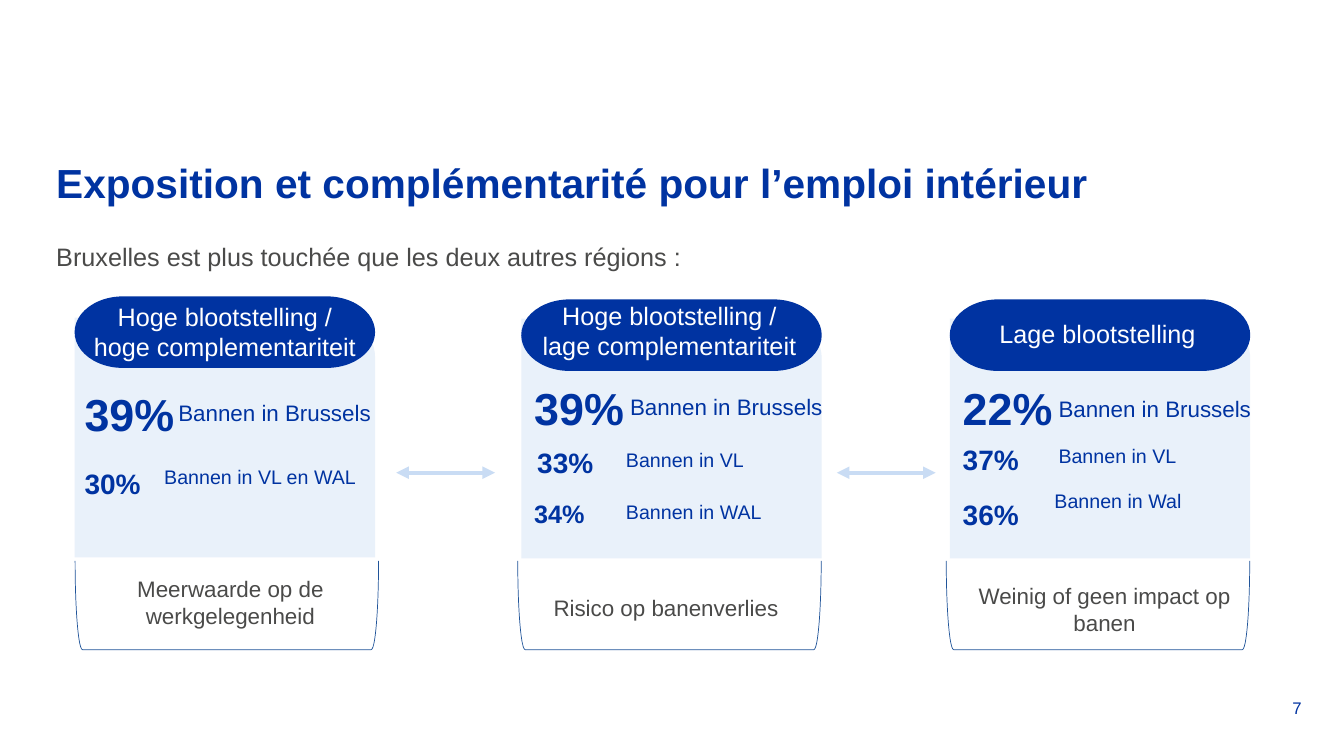
from lxml.etree import SubElement
from pptx import Presentation
from pptx.dml.color import RGBColor
from pptx.enum.shapes import MSO_CONNECTOR, MSO_SHAPE
from pptx.enum.text import MSO_ANCHOR, MSO_AUTO_SIZE, PP_ALIGN
from pptx.oxml.ns import qn
from pptx.util import Pt

PX = 9144
NAVY = RGBColor(0x00, 0x33, 0xA1)
PALE = RGBColor(0xC9, 0xDC, 0xF4)
GREY = RGBColor(0x4A, 0x4A, 0x49)
EDGE = RGBColor(0x20, 0x54, 0x99)
WHITE = RGBColor(0xFF, 0xFF, 0xFF)

CARDS = [
    {
        "left": 74, "panel_top": 315, "cap_top": 294, "bracket_left": 181,
        "heading": ("Hoge blootstelling /\vhoge complementariteit", 74, 294, 298, 71),
        "figures": [("39%", 74, 379, 32), ("30%", 74, 458, 20)],
        "labels": [("Bannen in Brussels", 167, 391, 16),
                   ("Bannen in VL en WAL", 153, 456, 14)],
        "outcome": ("Meerwaarde op de werkgelegenheid", 85, 566, 287, 64),
    },
    {
        "left": 517, "panel_top": 316, "cap_top": 297, "bracket_left": 620,
        "heading": ("Hoge blootstelling /\vlage complementariteit", 521, 293, 286, 71),
        "figures": [("39%", 520, 373, 32), ("33%", 523, 437, 20), ("34%", 520, 489, 18)],
        "labels": [("Bannen in Brussels", 615, 385, 16),
                   ("Bannen in VL", 611, 439, 14),
                   ("Bannen in WAL", 611, 491, 14)],
        "outcome": ("Risico op banenverlies", 517, 585, 287, 37),
    },
    {
        "left": 942, "panel_top": 316, "cap_top": 297, "bracket_left": 1045,
        "heading": ("Lage blootstelling", 945, 311, 287, 40),
        "figures": [("22%", 945, 373, 32), ("37%", 945, 434, 20), ("36%", 945, 489, 20)],
        "labels": [("Bannen in Brussels", 1040, 387, 16),
                   ("Bannen in VL", 1040, 435, 14),
                   ("Bannen in Wal", 1036, 480, 14)],
        "outcome": ("Weinig of geen impact op banen", 952, 573, 287, 64),
    },
]
ARROW_STARTS = [393, 830]


def scaled(*lengths):
    return [length * PX for length in lengths]


def apply_format(target, values):
    for name, value in values.items():
        setattr(target, name, value)


def add_text(page, text, left, top, width, height, size, color=NAVY, bold=False,
             align=PP_ALIGN.LEFT, anchor=MSO_ANCHOR.TOP, line_spacing=None):
    box = page.shapes.add_textbox(*scaled(left, top, width, height))
    apply_format(box.text_frame, {
        "word_wrap": True, "vertical_anchor": anchor, "text": text,
        "auto_size": (MSO_AUTO_SIZE.SHAPE_TO_FIT_TEXT if anchor == MSO_ANCHOR.TOP
                      else MSO_AUTO_SIZE.NONE),
    })
    para = box.text_frame.paragraphs[0]
    apply_format(para, {"alignment": align, "line_spacing": line_spacing})
    for span in para.runs:
        apply_format(span.font, {"name": "Arial", "size": Pt(size), "bold": bold})
        span.font.color.rgb = color


def add_filled(page, preset, left, top, width, height, color, opacity=100):
    shape = page.shapes.add_shape(preset, *scaled(left, top, width, height))
    shape.shadow.inherit = False
    shape.fill.solid()
    shape.fill.fore_color.rgb = color
    shape.line.fill.background()
    if opacity < 100:
        tint = shape._element.spPr.find(qn("a:solidFill")).find(qn("a:srgbClr"))
        SubElement(tint, qn("a:alpha"), val=str(opacity * 1000))


def add_bracket(page, left):
    bracket = page.shapes.add_shape(MSO_SHAPE.LEFT_BRACKET, *scaled(left, 450, 88, 301))
    bracket.shadow.inherit = False
    bracket.rotation = 270
    bracket.fill.background()
    bracket.line.color.rgb = EDGE
    bracket.line.width = Pt(0.5)


def add_double_arrow(page, start):
    arrow = page.shapes.add_connector(
        MSO_CONNECTOR.STRAIGHT, *scaled(start, 469, start + 98, 469))
    arrow.line.color.rgb = PALE
    arrow.line.width = Pt(3)
    outline = arrow._element.spPr.find(qn("a:ln"))
    for end in ("a:headEnd", "a:tailEnd"):
        SubElement(outline, qn(end), type="triangle")
    SubElement(arrow._element.spPr, qn("a:effectLst"))


def add_card(page, card):
    left = card["left"]
    add_filled(page, MSO_SHAPE.ROUND_1_RECTANGLE, left, card["panel_top"], 298, 238, PALE, 40)
    add_filled(page, MSO_SHAPE.FLOWCHART_TERMINATOR, left, card["cap_top"], 298, 71, NAVY)
    add_bracket(page, card["bracket_left"])
    add_text(page, *card["heading"], 18, WHITE, align=PP_ALIGN.CENTER)
    for text, x, y, size in card["figures"]:
        add_text(page, text, x, y, 242, size * 2, size, bold=True)
    for text, x, y, size in card["labels"]:
        add_text(page, text, x, y, 219, 37 if size == 16 else 34, size)
    add_text(page, *card["outcome"], 16, GREY, align=PP_ALIGN.CENTER)


def main():
    deck = Presentation()
    deck.slide_width, deck.slide_height = scaled(1333, 750)
    page = deck.slides.add_slide(deck.slide_layouts[6])
    add_text(page, "Exposition et complémentarité pour l’emploi intérieur",
             46, 111, 1117, 145, 29, bold=True, anchor=MSO_ANCHOR.MIDDLE, line_spacing=0.9)
    add_text(page, "Bruxelles est plus touchée que les deux autres régions :",
             46, 234, 793, 40, 18, GREY)
    for card in CARDS:
        add_card(page, card)
    for start in ARROW_STARTS:
        add_double_arrow(page, start)
    add_text(page, "7", 1001, 682, 300, 40, 12,
             align=PP_ALIGN.RIGHT, anchor=MSO_ANCHOR.MIDDLE)
    deck.save("out.pptx")


if __name__ == "__main__":
    main()
